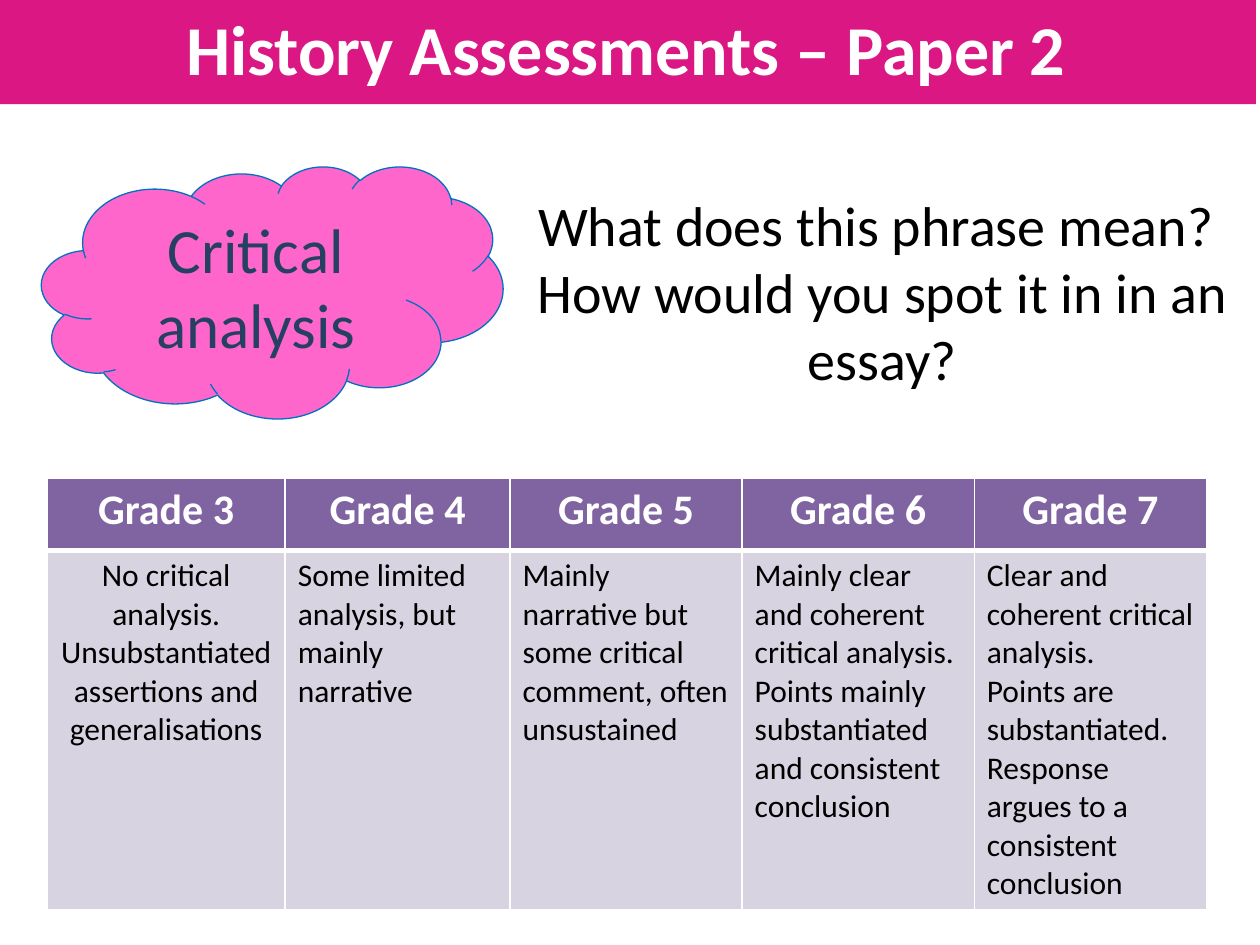
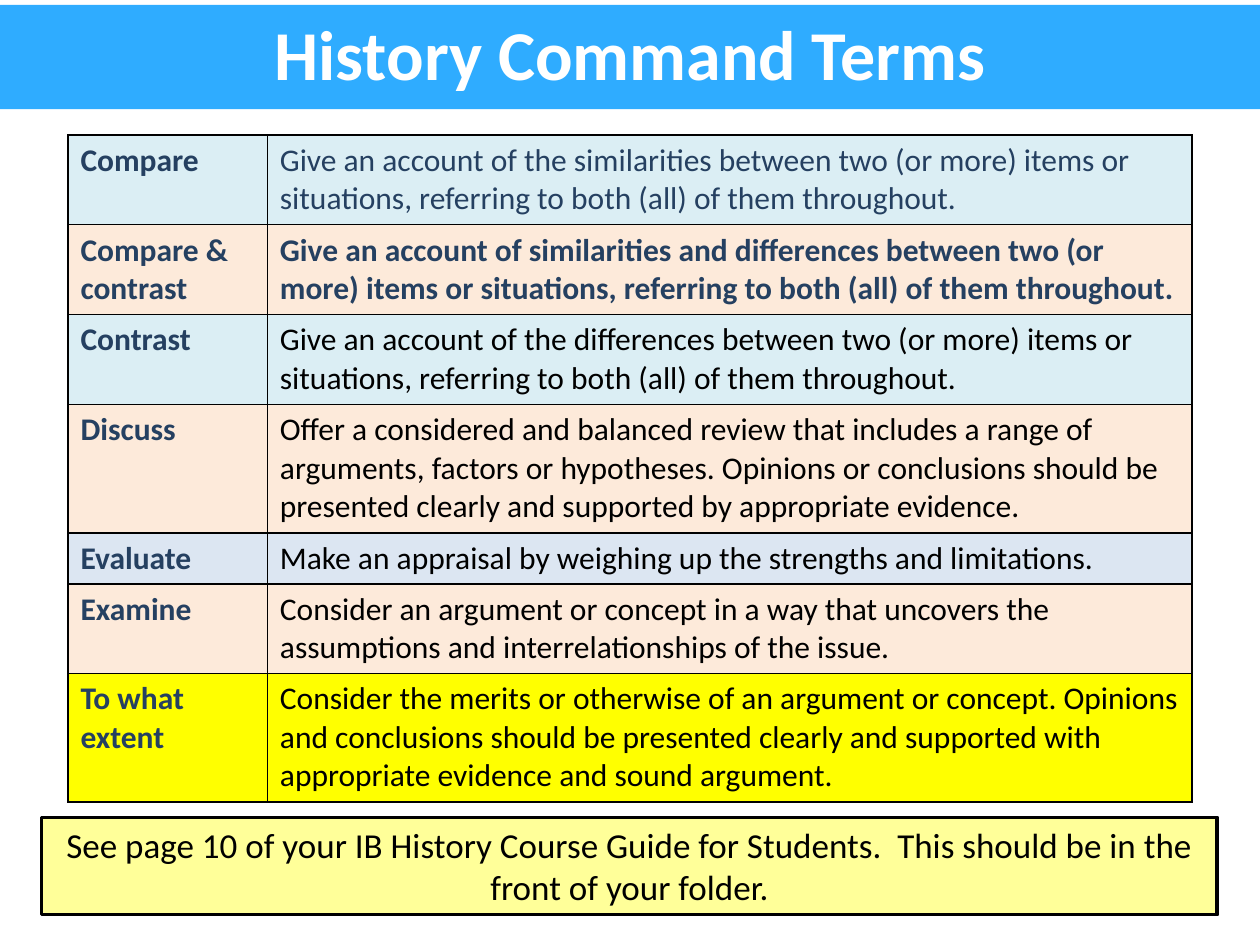
from lxml import etree
from pptx import Presentation
from pptx.dml.color import RGBColor
from pptx.enum.shapes import MSO_SHAPE
from pptx.enum.text import MSO_ANCHOR, MSO_AUTO_SIZE, PP_ALIGN
from pptx.oxml.ns import qn
from pptx.util import Cm, Pt

CENTER, LEFT = PP_ALIGN.CENTER, PP_ALIGN.LEFT
TOP, MIDDLE = MSO_ANCHOR.TOP, MSO_ANCHOR.MIDDLE
FIXED_SIZE = MSO_AUTO_SIZE.NONE
CLOUD, RECTANGLE = MSO_SHAPE.CLOUD, MSO_SHAPE.RECTANGLE
TITLE_ONLY = 5

WHITE = RGBColor(0xFF, 0xFF, 0xFF)
BLACK = RGBColor(0x00, 0x00, 0x00)
NAVY = RGBColor(0x25, 0x40, 0x61)
MAGENTA = RGBColor(0xDB, 0x17, 0x84)
PINK = RGBColor(0xFF, 0x66, 0xCC)
BLUE = RGBColor(0x00, 0x70, 0xC0)
SKY = RGBColor(0x2F, 0xAC, 0xFF)
PURPLE = RGBColor(0x80, 0x64, 0xA2)
LILAC = RGBColor(0xD8, 0xD3, 0xE0)
AQUA = RGBColor(0xDB, 0xEE, 0xF4)
PEACH = RGBColor(0xFD, 0xEA, 0xDA)
PALE_BLUE = RGBColor(0xDC, 0xE6, 0xF2)
YELLOW = RGBColor(0xFF, 0xFF, 0x00)
PALE_YELLOW = RGBColor(0xFF, 0xFF, 0x99)

# Text formats
TITLE = {"size": Pt(40), "bold": True, "color": WHITE}
CLOUD_TEXT = {"size": Pt(36), "bold": False, "color": NAVY}
QUESTION = {"size": Pt(32), "bold": False, "color": BLACK}
HEADING = {"size": Pt(24), "bold": True, "color": WHITE}
NOTE = {"size": Pt(20), "bold": False, "color": BLACK}
BODY = {"size": Pt(18), "bold": False, "color": BLACK}
NAVY_BODY = {**BODY, "color": NAVY}
TERM = {**NAVY_BODY, "bold": True}

GRADES = [
    ("Grade 3", "No critical analysis. Unsubstantiated assertions and generalisations"),
    ("Grade 4", "Some limited analysis, but mainly narrative"),
    ("Grade 5", "Mainly narrative but some critical comment, often unsustained"),
    ("Grade 6", "Mainly clear and coherent critical analysis. Points mainly "
                "substantiated and consistent conclusion"),
    ("Grade 7", "Clear and coherent critical analysis.\nPoints are substantiated. "
                "Response argues to a consistent conclusion"),
]

# Term, definition, definition format, row fill, lines of text
COMMAND_TERMS = [
    ("Compare", "Give an account of the similarities between two (or more) items or "
     "situations, referring to both (all) of them throughout.", NAVY_BODY, AQUA, 2),
    ("Compare & contrast", "Give an account of similarities and differences between two "
     "(or more) items or situations, referring to both (all) of them throughout.",
     TERM, PEACH, 2),
    ("Contrast", "Give an account of the differences between two (or more) items or "
     "situations, referring to both (all) of them throughout.", BODY, AQUA, 2),
    ("Discuss", "Offer a considered and balanced review that includes a range of "
     "arguments, factors or hypotheses. Opinions or conclusions should be presented "
     "clearly and supported by appropriate evidence.", BODY, PEACH, 3),
    ("Evaluate", "Make an appraisal by weighing up the strengths and limitations.",
     BODY, PALE_BLUE, 1),
    ("Examine", "Consider an argument or concept in a way that uncovers the assumptions "
     "and interrelationships of the issue.", BODY, PEACH, 2),
    ("To what extent", "Consider the merits or otherwise of an argument or concept. "
     "Opinions and conclusions should be presented clearly and supported with "
     "appropriate evidence and sound argument.", BODY, YELLOW, 3),
]


class Deck:
    """Holds the style and the current slide."""

    font_name = "Calibri"

    def __init__(self):
        self.presentation = Presentation()
        self.presentation.slide_width = Cm(25.4)
        self.presentation.slide_height = Cm(19.05)
        self.slide = None

    def set_text(self, frame, text, text_format, align=LEFT):
        frame.text = text
        for para in frame.paragraphs:
            para.alignment = align
            for span in para.runs:
                span.font.name = self.font_name
                for name, value in text_format.items():
                    if name == "color":
                        span.font.color.rgb = value
                    else:
                        setattr(span.font, name, value)

    def fit(self, frame, anchor):
        settings = {"word_wrap": True, "auto_size": FIXED_SIZE, "vertical_anchor": anchor}
        for name, value in settings.items():
            setattr(frame, name, value)

    def page(self, title, fill, left, top):
        """Add a slide whose title is a full-width band."""
        layout = self.presentation.slide_layouts[TITLE_ONLY]
        self.slide = self.presentation.slides.add_slide(layout)
        band = self.slide.shapes.title
        place = {"left": Cm(left), "top": Cm(top), "width": Cm(25.4), "height": Cm(2.1)}
        for name, value in place.items():
            setattr(band, name, value)
        band.fill.solid()
        band.fill.fore_color.rgb = fill
        self.fit(band.text_frame, MIDDLE)
        self.set_text(band.text_frame, title, TITLE, CENTER)
        band.text_frame.paragraphs[0].line_spacing = 0.93

    def shape(self, kind, place, text, text_format, fill, line, line_width):
        box = self.slide.shapes.add_shape(kind, *map(Cm, place))
        box.shadow.inherit = False
        box.fill.solid()
        box.fill.fore_color.rgb = fill
        box.line.color.rgb = line
        box.line.width = Pt(line_width)
        self.fit(box.text_frame, TOP)
        self.set_text(box.text_frame, text, text_format, CENTER)

    def text(self, place, text, text_format):
        box = self.slide.shapes.add_textbox(*map(Cm, place))
        self.fit(box.text_frame, TOP)
        self.set_text(box.text_frame, text, text_format, CENTER)

    def table(self, left, top, widths, heights):
        place = map(Cm, (left, top, sum(widths), sum(heights)))
        table = self.slide.shapes.add_table(len(heights), len(widths), *place).table
        table.first_row = table.horz_banding = False
        for column, width in zip(table.columns, widths):
            column.width = Cm(width)
        for row, height in zip(table.rows, heights):
            row.height = Cm(height)
        return table

    def cell(self, cell, text, text_format, fill, border, align=LEFT, **thick):
        """Fill a cell; thick gives the widths of sides that are not 1 pt."""
        properties = cell._tc.get_or_add_tcPr()
        for side in "LRTB":
            width = Pt(thick.get(side, 1))
            line = etree.SubElement(properties, qn(f"a:ln{side}"), w=str(int(width)))
            solid = etree.SubElement(line, qn("a:solidFill"))
            etree.SubElement(solid, qn("a:srgbClr"), val=str(border))
        cell.fill.solid()
        cell.fill.fore_color.rgb = fill
        self.set_text(cell.text_frame, text, text_format, align)


def add_assessments(deck):
    deck.page("History Assessments – Paper 2", MAGENTA, -0.08, 0)
    deck.shape(CLOUD, (0.84, 3.35, 9.3, 5.08), "Critical analysis", CLOUD_TEXT,
               PINK, BLUE, 0.75)
    deck.text((9.75, 3.71, 16.08, 4.37),
              "What does this phrase mean?  How would you spot it in in an essay?", QUESTION)

    # Grade descriptors
    table = deck.table(0.95, 9.65, [4.8, 4.53, 4.68, 4.68, 4.68], [1.45, 7.11])
    for column, (grade, descriptor) in enumerate(GRADES):
        align = LEFT if column else CENTER
        deck.cell(table.cell(0, column), grade, HEADING, PURPLE, WHITE, CENTER, B=3)
        deck.cell(table.cell(1, column), descriptor, BODY, LILAC, WHITE, align, T=3)


def add_command_terms(deck):
    deck.page("History Command Terms", SKY, 0, 0.1)

    # Row height follows the number of text lines
    heights = [0.25 + 0.78 * lines for *_, lines in COMMAND_TERMS]
    table = deck.table(1.37, 2.72, [4.02, 18.64], heights)
    for row, (term, definition, text_format, fill, _) in enumerate(COMMAND_TERMS):
        deck.cell(table.cell(row, 0), term, TERM, fill, BLACK)
        deck.cell(table.cell(row, 1), definition, text_format, fill, BLACK)

    # Reminder
    deck.shape(RECTANGLE, (0.84, 16.48, 23.7, 1.96),
               "See page 10 of your IB History Course Guide for Students.  "
               "This should be in the front of your folder.",
               NOTE, PALE_YELLOW, BLACK, 2)


def main():
    deck = Deck()
    add_assessments(deck)
    add_command_terms(deck)
    deck.presentation.save("out.pptx")


if __name__ == "__main__":
    main()
